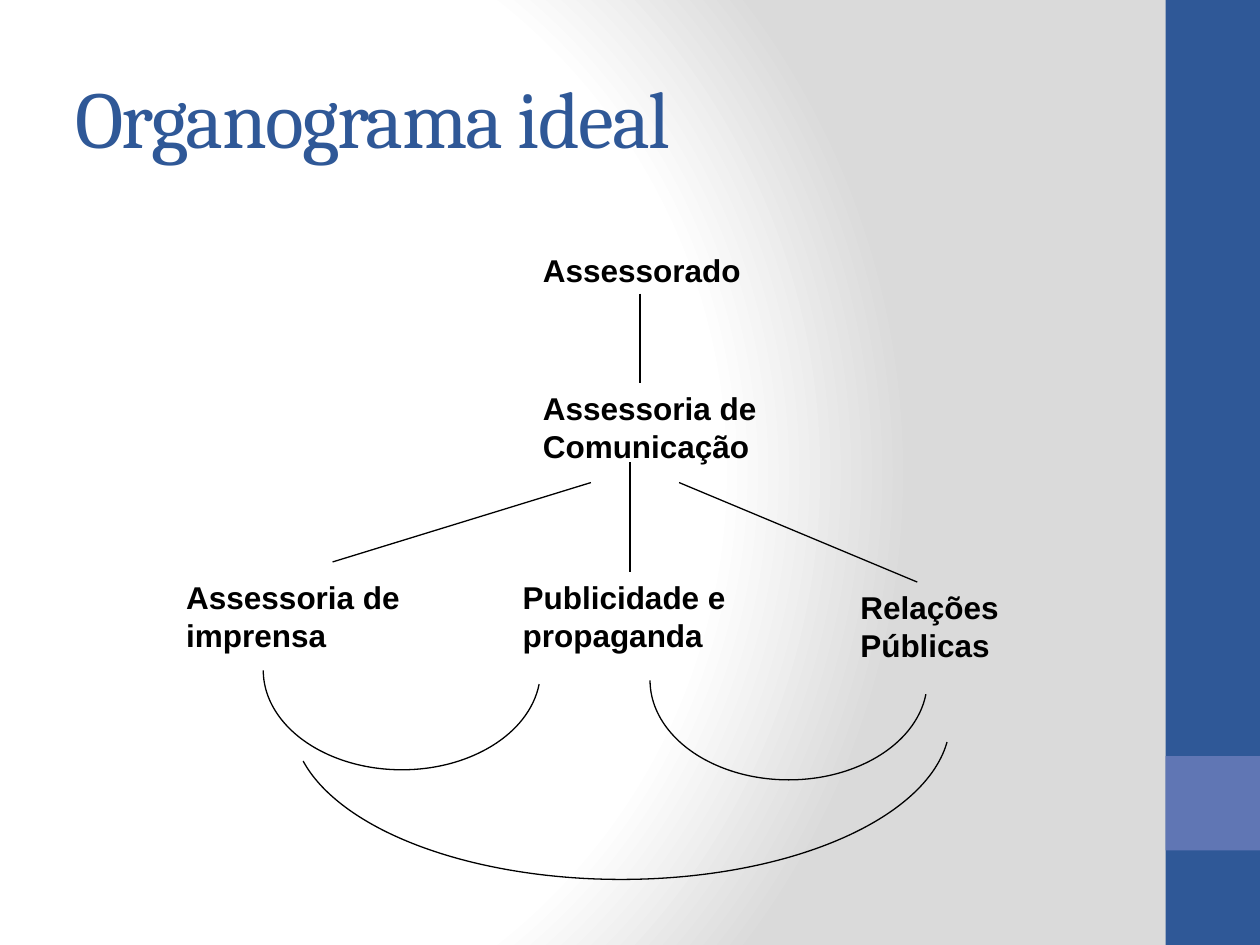
from dataclasses import dataclass
from math import atan2, degrees

from pptx import Presentation
from pptx.dml.color import RGBColor
from pptx.enum.shapes import MSO_CONNECTOR, MSO_SHAPE
from pptx.enum.text import MSO_ANCHOR
from pptx.oxml import parse_xml
from pptx.oxml.ns import nsdecls
from pptx.util import Inches, Pt

LINE, ARC, RECTANGLE = MSO_CONNECTOR.STRAIGHT, MSO_SHAPE.ARC, MSO_SHAPE.RECTANGLE
MIDDLE, TOP = MSO_ANCHOR.MIDDLE, MSO_ANCHOR.TOP
WIDTH, HEIGHT = Inches(10), Inches(7.5)
COLUMNS, ROWS = 10, 7.5
ARC_UNITS_PER_DEGREE = 0.6


@dataclass(frozen=True)
class Theme:
    """Colours, fonts and sizes of the slide."""
    blue: str = "2F5897"
    violet: str = "6076B4"
    black: str = "000000"
    light: str = "FFFFFF"
    shade: str = "DADADA"
    title_font: str = "Cambria"
    label_font: str = "Arial"
    title_size: float = 46
    label_size: float = 18
    line_width: float = 0.75


THEME = Theme()
LABELS = [
    ("Assessorado", 4.21, 1.94, 1.89, 0.4),
    ("Assessoria de Comunicação", 4.21, 3.04, 2.52, 0.71),
    ("Assessoria de imprensa", 1.38, 4.54, 1.97, 0.7),
    ("Publicidade e propaganda", 4.05, 4.54, 2.13, 0.7),
    ("Relações Públicas", 6.73, 4.62, 1.97, 0.7),
]
BRANCHES = [
    (5.08, 2.33, 5.08, 3.04),
    (5, 3.67, 5, 4.54),
    (4.69, 3.83, 2.64, 4.46),
    (5.39, 3.83, 7.28, 4.62),
]
ARCS = [
    ((3.19, 5.32), (1.1, 0.79), (4.28, 5.43), (2.09, 5.32)),
    ((6.26, 5.4), (1.1, 0.79), (7.35, 5.51), (5.16, 5.4)),
    ((4.93, 5.72), (2.61, 1.26), (7.52, 5.89), (2.41, 6.04)),
]


def place(*lengths):
    """Turn alternating columns and rows into slide lengths."""
    steps = (WIDTH / COLUMNS, HEIGHT / ROWS)
    return [round(length * steps[i % 2]) for i, length in enumerate(lengths)]


def set_background(page):
    """Give the page a circular gradient."""
    stops = "".join(
        f'<a:gs pos="{share * 1000}"><a:srgbClr val="{colour}"/></a:gs>'
        for share, colour in ((0, THEME.light), (75, THEME.light), (100, THEME.shade)))
    page._element.cSld.insert(0, parse_xml(
        f'<p:bg {nsdecls("p", "a")}><p:bgPr><a:gradFill rotWithShape="1">'
        f'<a:gsLst>{stops}</a:gsLst><a:path path="circle">'
        '<a:fillToRect l="20000" t="50000" r="100000" b="50000"/></a:path>'
        '</a:gradFill><a:effectLst/></p:bgPr></p:bg>'))


def add_band(page, colour, *area):
    """Add a plain filled rectangle."""
    band = page.shapes.add_shape(RECTANGLE, *place(*area))
    band.shadow.inherit = False
    band.fill.solid()
    band.fill.fore_color.rgb = RGBColor.from_string(colour)
    band.line.fill.background()


def add_text(page, text, area, font, size, colour, bold=False, anchor=TOP):
    """Add a wrapped text box and return its paragraph."""
    frame = page.shapes.add_textbox(*place(*area)).text_frame
    frame.word_wrap = True
    frame.vertical_anchor = anchor
    para = frame.paragraphs[0]
    para.text = text
    para.font.name, para.font.size, para.font.bold = font, Pt(size), bold
    para.font.color.rgb = RGBColor.from_string(colour)
    return para


def style_line(line):
    """Apply the thin black stroke."""
    line.color.rgb = RGBColor.from_string(THEME.black)
    line.width = Pt(THEME.line_width)


def add_branch(page, *ends):
    """Add a straight connector without a shadow."""
    branch = page.shapes.add_connector(LINE, *place(*ends))
    style_line(branch.line)
    branch._element.spPr.append(parse_xml(f'<a:effectLst {nsdecls("a")}/>'))


def add_arc(page, centre, radii, start, end):
    """Add an elliptical arc running clockwise from start to end."""
    (x, y), (across, down) = centre, radii
    arc = page.shapes.add_shape(
        ARC, *place(x - across, y - down, 2 * across, 2 * down))
    for i, (end_x, end_y) in enumerate((start, end)):
        angle = degrees(atan2(end_y - y, end_x - x))
        arc.adjustments[i] = angle * ARC_UNITS_PER_DEGREE
    arc.shadow.inherit = False
    arc.fill.background()
    style_line(arc.line)


def main():
    """Build and save the organisation chart slide."""
    deck = Presentation()
    deck.slide_width, deck.slide_height = WIDTH, HEIGHT
    page = deck.slides.add_slide(deck.slide_layouts[6])
    set_background(page)
    add_band(page, THEME.blue, 9.25, 0, 0.75, ROWS)
    add_band(page, THEME.violet, 9.25, 6, 0.75, 0.75)
    title = add_text(page, "Organograma ideal", (0.5, 0.3, 8.33, 1.25),
                     THEME.title_font, THEME.title_size, THEME.blue, anchor=MIDDLE)
    title.runs[0].font._element.set("spc", "-100")
    for text, *area in LABELS:
        add_text(page, text, area, THEME.label_font, THEME.label_size,
                 THEME.black, bold=True)
    for ends in BRANCHES:
        add_branch(page, *ends)
    for arc in ARCS:
        add_arc(page, *arc)
    deck.save("out.pptx")


if __name__ == "__main__":
    main()
